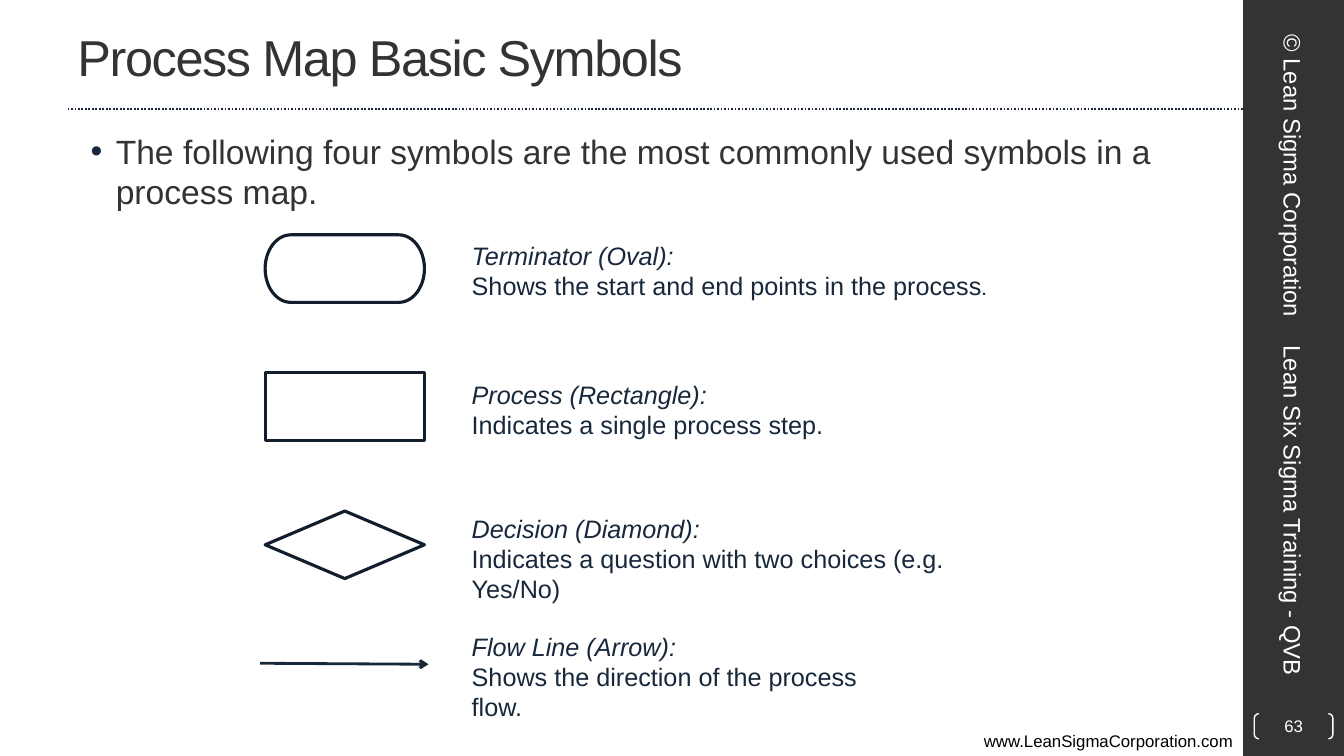
from lxml.etree import SubElement
from pptx import Presentation
from pptx.dml.color import RGBColor
from pptx.enum.dml import MSO_LINE
from pptx.enum.shapes import MSO_CONNECTOR, MSO_SHAPE
from pptx.enum.text import MSO_ANCHOR, PP_ALIGN
from pptx.oxml.ns import qn
from pptx.util import Inches, Pt

CHARCOAL, NAVY, WHITE = "333333", "18283B", "FFFFFF"


def color(value):
    return RGBColor.from_string(value)


def add_text(shape, paragraphs, size, hex_color, align=PP_ALIGN.LEFT, anchor=MSO_ANCHOR.TOP):
    """Each paragraph is a list of (text, font name, italic) runs."""
    frame = shape.text_frame
    frame.word_wrap = True
    frame.vertical_anchor = anchor
    for index, runs in enumerate(paragraphs):
        paragraph = frame.add_paragraph() if index else frame.paragraphs[0]
        paragraph.alignment = align
        for text, font_name, italic in runs:
            run = paragraph.add_run()
            run.text = text
            run.font.name = font_name
            run.font.size = Pt(size)
            run.font.italic = italic
            run.font.color.rgb = color(hex_color)
    return frame.paragraphs[0]


presentation = Presentation()
presentation.slide_width = Inches(13.33)
presentation.slide_height = Inches(7.5)
slide = presentation.slides.add_slide(presentation.slide_layouts[6])
shapes = slide.shapes

# Sidebar
sidebar = shapes.add_shape(MSO_SHAPE.RECTANGLE, Inches(12.33), 0, Inches(1), Inches(7.5))
sidebar.shadow.inherit = False
sidebar.fill.solid()
sidebar.fill.fore_color.rgb = color(CHARCOAL)
sidebar.line.fill.background()

# Title rule and flow line
rule = shapes.add_connector(
    MSO_CONNECTOR.STRAIGHT, Inches(0.67), Inches(1.08), Inches(12.33), Inches(1.08))
flow_line = shapes.add_connector(
    MSO_CONNECTOR.STRAIGHT, Inches(2.58), Inches(6.58), Inches(4.25), Inches(6.59))
for connector, hex_color, width in ((rule, "17273B", 1.25), (flow_line, NAVY, 2)):
    connector.line.color.rgb = color(hex_color)
    connector.line.width = Pt(width)
    SubElement(connector._element.spPr, qn("a:effectLst"))
rule.line.dash_style = MSO_LINE.ROUND_DOT
SubElement(flow_line.line._get_or_add_ln(), qn("a:tailEnd"), type="arrow")

# Web address
address = shapes.add_textbox(0, Inches(7.2), Inches(12.33), Inches(0.3))
add_text(address, [[("www.LeanSigmaCorporation.com", "Arial", False)]], 12, "000000", PP_ALIGN.RIGHT)

# Title
title = shapes.add_textbox(Inches(0.67), Inches(0.03), Inches(11.11), Inches(1.05))
paragraph = add_text(title, [[("Process Map Basic Symbols", "Arial", False)]], 36, CHARCOAL,
                     anchor=MSO_ANCHOR.MIDDLE)
paragraph.runs[0].font._element.set("spc", "-100")

# Introductory bullet
body = shapes.add_textbox(Inches(0.67), Inches(1.25), Inches(11.11), Inches(0.95))
introduction = "The following four symbols are the most commonly used symbols in a process map."
paragraph = add_text(body, [[(introduction, "Arial", False)]], 24, CHARCOAL)
properties = paragraph._p.get_or_add_pPr()
properties.set("marL", str(Inches(0.38)))
properties.set("indent", str(Inches(-0.25)))
bullet_color = SubElement(properties, qn("a:buClr"))
SubElement(bullet_color, qn("a:srgbClr"), val=NAVY)
SubElement(properties, qn("a:buFont"), typeface="Arial")
SubElement(properties, qn("a:buChar"), char="•")

# Page number in brackets
page_number = shapes.add_shape(
    MSO_SHAPE.DOUBLE_BRACKET, Inches(12.44), Inches(7.08), Inches(0.78), Inches(0.25))
page_number.adjustments[0] = 0.18
page_number.shadow.inherit = False
page_number.fill.background()
page_number.line.color.rgb = color(WHITE)
page_number.line.width = Pt(1)
frame = page_number.text_frame
frame.margin_left = frame.margin_right = frame.margin_top = frame.margin_bottom = 0
add_text(page_number, [[("63", "Arial", False)]], 12, WHITE, PP_ALIGN.CENTER, MSO_ANCHOR.MIDDLE)

# Vertical sidebar captions
for caption, left, top, width, align in (
    ("© Lean Sigma Corporation", 11.24, 1.48, 3.17, PP_ALIGN.CENTER),
    ("Lean Six Sigma Training - QVB", 10.99, 4.9, 3.67, PP_ALIGN.LEFT),
):
    box = shapes.add_textbox(Inches(left), Inches(top), Inches(width), Inches(0.53))
    box.rotation = 90
    add_text(box, [[(caption, "Arial", False)]], 17, WHITE, align, MSO_ANCHOR.MIDDLE)

# Symbols, evenly spaced
symbols = (MSO_SHAPE.FLOWCHART_TERMINATOR, MSO_SHAPE.FLOWCHART_PROCESS, MSO_SHAPE.FLOWCHART_DECISION)
for row, kind in enumerate(symbols):
    symbol = shapes.add_shape(
        kind, Inches(2.63), Inches(2.33 + 1.37 * row), Inches(1.58), Inches(0.67))
    symbol.shadow.inherit = False
    symbol.fill.background()
    symbol.line.color.rgb = color("121E2C")
    symbol.line.width = Pt(2.25)

# Symbol descriptions
for name, meaning, top, width, height in (
    ("Terminator (Oval):", [("Shows the start and end points in the process", "Arial", False),
                            (".", "Cabin", False)], 2.33, 5.38, 0.71),
    ("Process (Rectangle):", [("Indicates a single process step.", "Arial", False)],
     3.71, 4.58, 0.71),
    ("Decision (Diamond):", [("Indicates a question with two choices (e.g. Yes/No)", "Arial", False)],
     5.04, 5.46, 1.01),
    ("Flow Line (Arrow):", [("Shows the direction of the process flow.", "Arial", False)],
     6.21, 4.58, 1.01),
):
    box = shapes.add_textbox(Inches(4.58), Inches(top), Inches(width), Inches(height))
    add_text(box, [[(name, "Arial", True)], meaning], 18, NAVY)

presentation.save("out.pptx")
